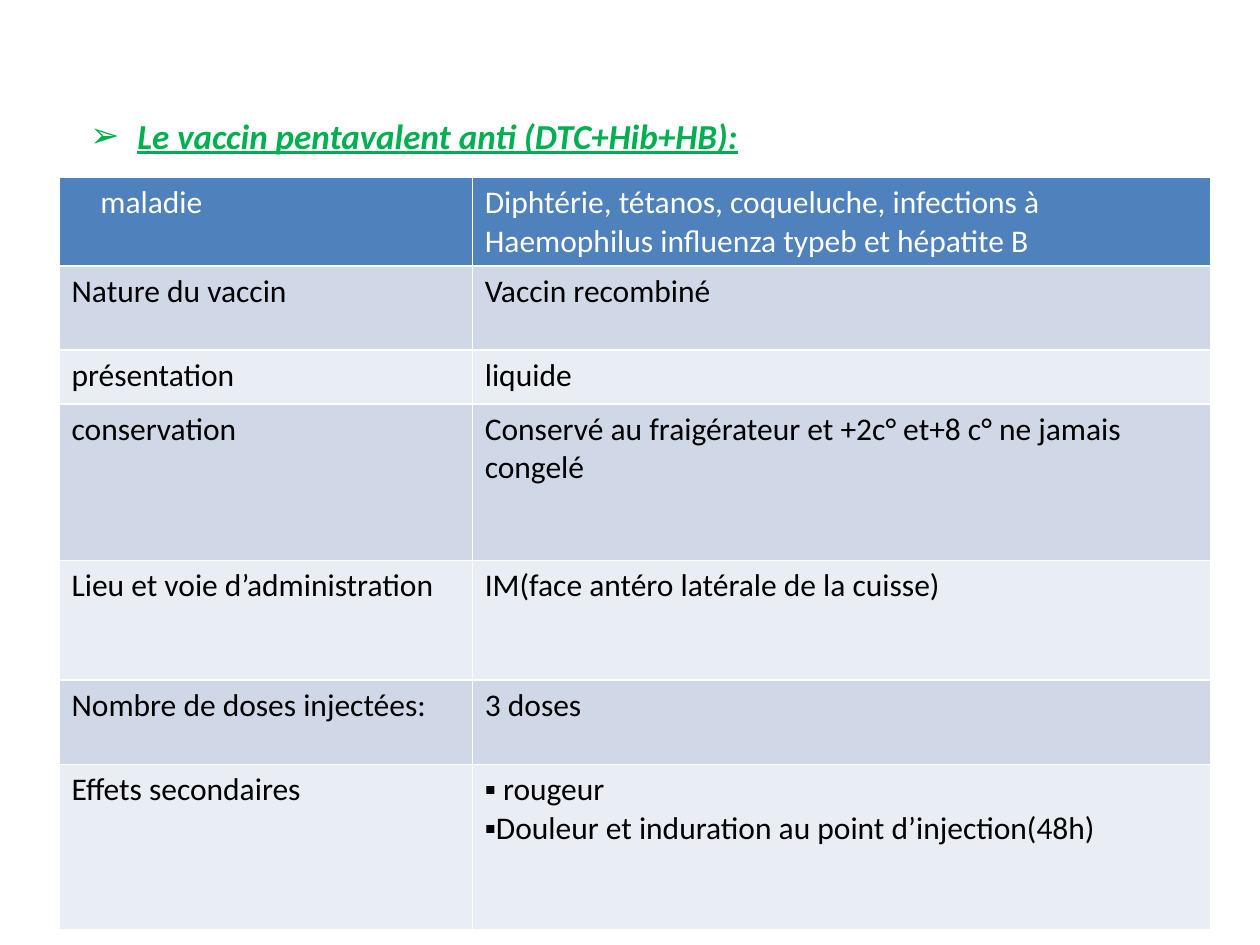
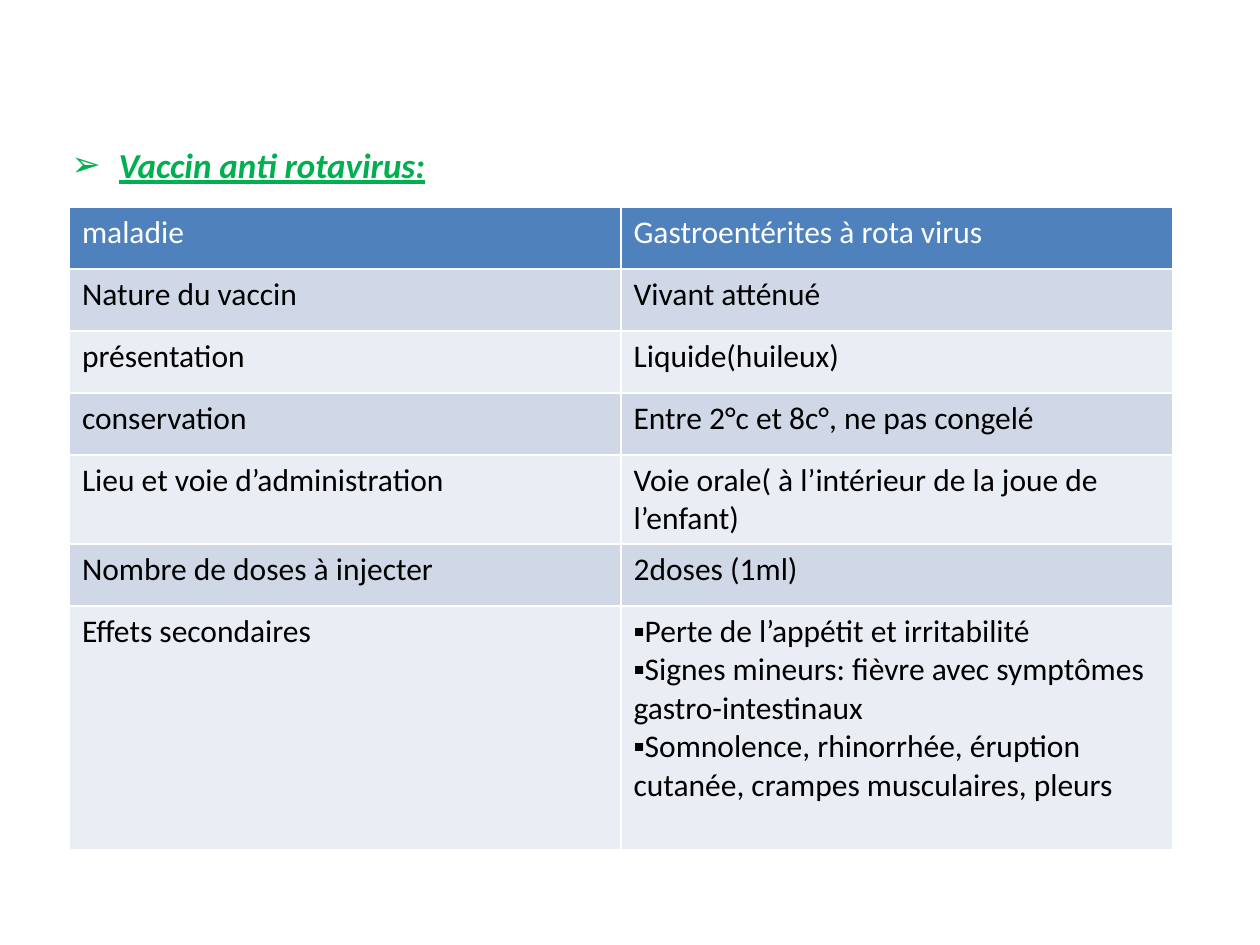
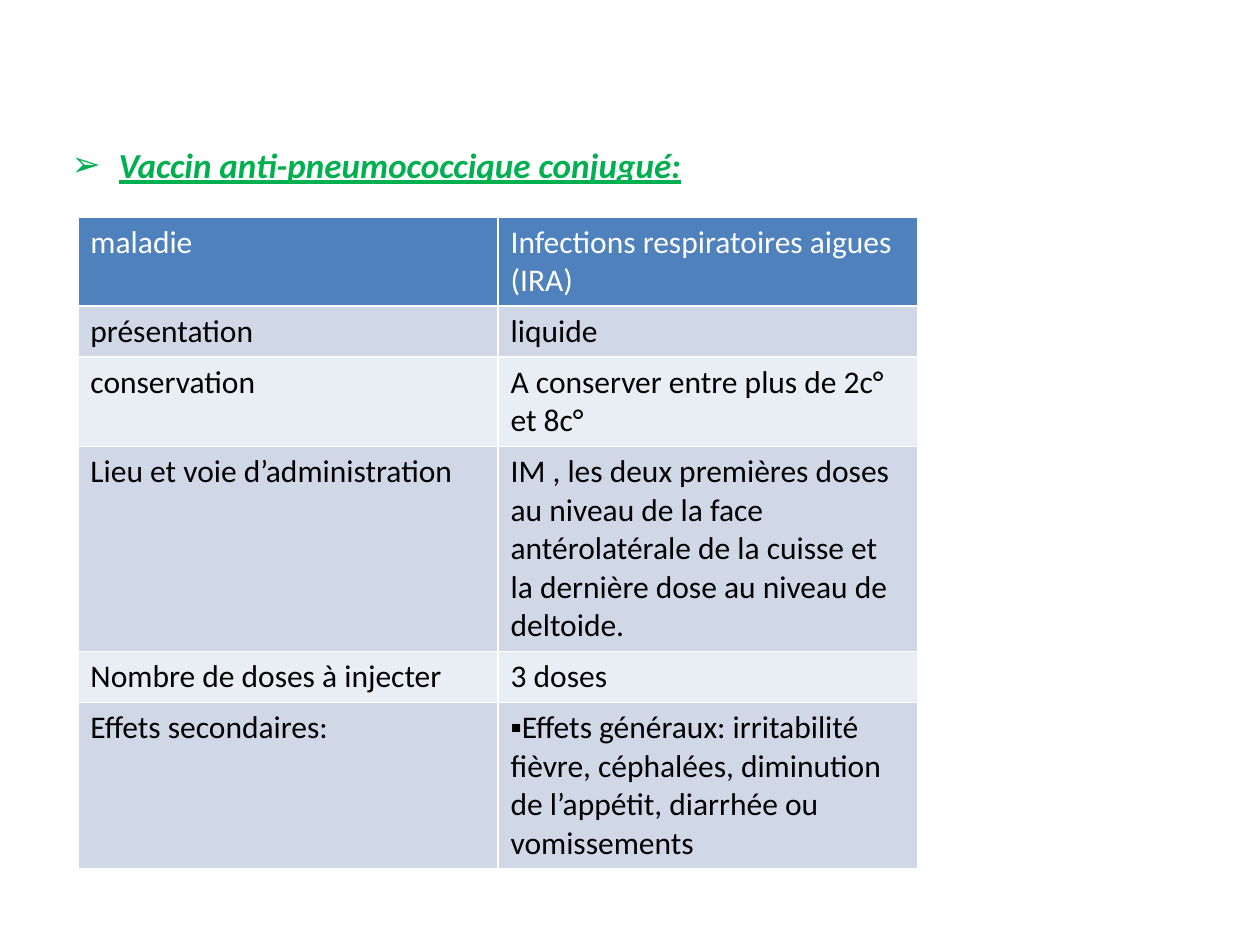
from dataclasses import dataclass

from lxml.etree import SubElement as Sub
from pptx import Presentation
from pptx.dml.color import RGBColor as Rgb
from pptx.oxml import parse_xml
from pptx.oxml.ns import nsdecls, qn
from pptx.util import Cm, Pt


@dataclass(frozen=True)
class Theme:
    font: str = "Calibri"
    title: str = "00B050"
    head: str = "4F81BD"
    bands: tuple = ("D0D8E8", "E9EDF4")
    light: str = "FFFFFF"
    dark: str = "000000"
    big: int = 20
    small: int = 18
    rule: int = 1


THEME = Theme()
BULLET = "▪"


def add_run(para, text, size, color):
    run = para.add_run()
    run.text = text
    run.font.name = THEME.font
    run.font.size = Pt(size)
    run.font.color.rgb = Rgb.from_string(color)
    return run


def indent(para, left, first=0):
    props = para._p.get_or_add_pPr()
    props.set("marL", str(Cm(left)))
    props.set("indent", str(Cm(first)))
    return props


def add_bullet(para, mark, left=0, first=0):
    props = indent(para, left, first)
    Sub(props, qn("a:buFont"), typeface=THEME.font)
    Sub(props, qn("a:buChar"), char=mark)


def add_title(slide, box, text):
    frame = slide.shapes.add_textbox(*map(Cm, box)).text_frame
    frame.word_wrap = True
    para = frame.paragraphs[0]
    para.space_before = Pt(THEME.big * 0.2)
    add_bullet(para, "➢", 0.95, -0.95)
    font = add_run(para, text, THEME.big, THEME.title).font
    font.bold = font.italic = font.underline = True


def add_rules(cell):
    """Draw a thin light line on all four sides of a cell."""
    props = cell._tc.get_or_add_tcPr()
    for spot, side in enumerate("LRTB"):
        props.insert(spot, parse_xml(
            f'<a:ln{side} {nsdecls("a")} w="{Pt(THEME.rule)}"><a:solidFill>'
            f'<a:srgbClr val="{THEME.light}"/></a:solidFill></a:ln{side}>'))


def fill_cell(cell, text, row):
    """Write one paragraph per line; a leading square becomes a bullet."""
    cell.fill.solid()
    back = THEME.bands[(row - 1) % 2] if row else THEME.head
    cell.fill.fore_color.rgb = Rgb.from_string(back)
    add_rules(cell)
    frame = cell.text_frame
    for spot, line in enumerate(text.split("\n")):
        para = frame.add_paragraph() if spot else frame.paragraphs[0]
        if line.startswith(BULLET):
            add_bullet(para, BULLET)
        add_run(para, line.removeprefix(BULLET), THEME.small,
                THEME.dark if row else THEME.light)


def add_grid(slide, spot, cols, rows, cells):
    box = (*spot, sum(cols), sum(rows))
    table = slide.shapes.add_table(
        len(rows), len(cols), *map(Cm, box)).table
    table.first_row = table.horz_banding = False
    for col, width in zip(table.columns, cols):
        col.width = Cm(width)
    for row, height in enumerate(rows):
        table.rows[row].height = Cm(height)
        for col, text in enumerate(cells[row]):
            fill_cell(table.cell(row, col), text, row)
    return table


def add_page(deck, spot, title):
    slide = deck.slides.add_slide(deck.slide_layouts[6])
    add_title(slide, (*spot, 22.86, 12.19), title)
    return slide


def add_penta(deck):
    slide = add_page(deck, (1.57, 2.18),
                     "Le vaccin pentavalent anti (DTC+Hib+HB):")
    table = add_grid(
        slide, (1.19, 3.58), (8.33, 14.88),
        (1.75, 1.7, 1.09, 3.15, 2.41, 1.7, 3.33), (
            ("maladie", "Diphtérie, tétanos, coqueluche, infections à "
             "Haemophilus influenza typeb et hépatite B"),
            ("Nature du vaccin", "Vaccin recombiné"),
            ("présentation", "liquide"),
            ("conservation", "Conservé au fraigérateur et +2c° et+8 c° "
             "ne jamais congelé"),
            ("Lieu et voie d’administration",
             "IM(face antéro latérale de la cuisse)"),
            ("Nombre de doses injectées:", "3 doses"),
            ("Effets secondaires", "▪ rougeur\n"
             "▪Douleur et induration au point d’injection(48h)")))
    indent(table.cell(0, 0).text_frame.paragraphs[0], 0.58)


def add_rota(deck):
    slide = add_page(deck, (1.19, 2.77), "Vaccin anti rotavirus:")
    add_grid(
        slide, (1.4, 4.17), (11.12,) * 2,
        (1.25,) * 4 + (1.8, 1.25, 4.9), (
            ("maladie", "Gastroentérites à rota virus"),
            ("Nature du vaccin", "Vivant atténué"),
            ("présentation", "Liquide(huileux)"),
            ("conservation", "Entre 2°c et 8c°, ne pas congelé"),
            ("Lieu et voie d’administration",
             "Voie orale( à l’intérieur de la joue de l’enfant)"),
            ("Nombre de doses à injecter", "2doses (1ml)"),
            ("Effets secondaires", "▪Perte de l’appétit et irritabilité\n"
             "▪Signes mineurs: fièvre avec symptômes gastro-intestinaux\n"
             "▪Somnolence, rhinorrhée, éruption cutanée, crampes "
             "musculaires, pleurs")))


def add_pneumo(deck):
    slide = add_page(deck, (1.19, 2.77),
                     "Vaccin anti-pneumococcique conjugué:")
    add_grid(
        slide, (1.57, 4.37), (8.47,) * 2,
        (1.8, 1.03, 1.8, 4.13, 1.03, 3.35), (
            ("maladie", "Infections respiratoires aigues (IRA)"),
            ("présentation", "liquide"),
            ("conservation", "A conserver entre plus de 2c° et 8c°"),
            ("Lieu et voie d’administration",
             "IM , les deux premières doses au niveau de la face "
             "antérolatérale de la cuisse et la dernière dose au niveau "
             "de deltoide."),
            ("Nombre de doses à injecter", "3 doses"),
            ("Effets secondaires:", "▪Effets généraux: irritabilité "
             "fièvre, céphalées, diminution de l’appétit, diarrhée ou "
             "vomissements")))


def main():
    deck = Presentation()
    deck.slide_width, deck.slide_height = Cm(25.4), Cm(19.05)
    for build in (add_penta, add_rota, add_pneumo):
        build(deck)
    deck.save("out.pptx")


if __name__ == "__main__":
    main()
